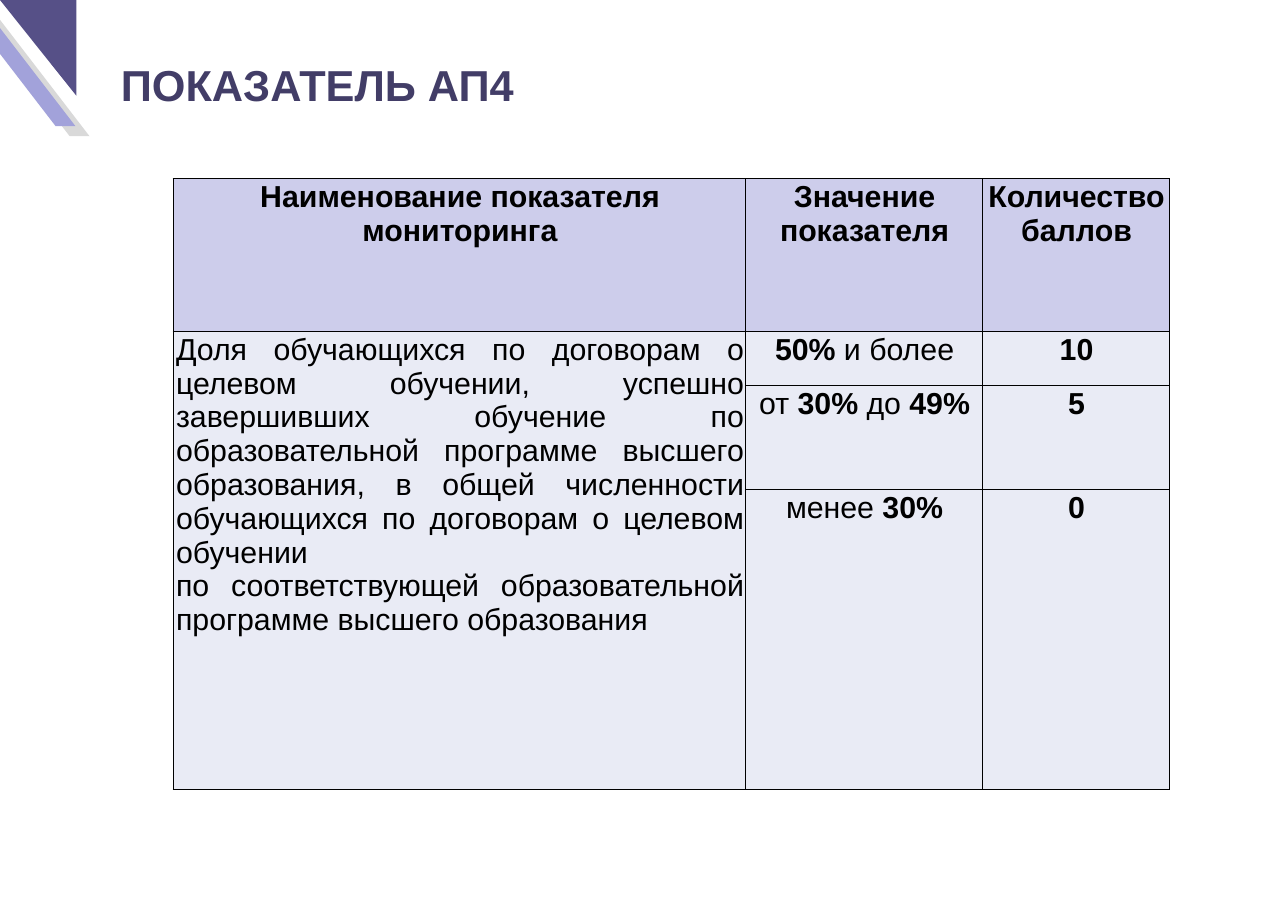
import pptx
import pptx.util
import pptx.dml.color
import pptx.enum.shapes
import pptx.enum.text
from lxml import etree
from pptx.util import Cm

FONT = "Arial"
BLACK = "000000"
HEADER_FILL = "CDCDEB"
BODY_FILL = "E9EBF5"
A = "http://schemas.openxmlformats.org/drawingml/2006/main"
ALIGN = pptx.enum.text.PP_ALIGN
SHAPE = pptx.enum.shapes.MSO_SHAPE

COLUMN_WIDTHS = [18.66, 7.72, 6.1]
ROW_HEIGHTS = [4.98, 1.76, 3.38, 9.8]
# Text between ** marks is bold
ROWS = [
    ["**Наименование показателя мониторинга**", "**Значение показателя**",
     "**Количество баллов**"],
    ["Доля обучающихся по договорам о целевом обучении, успешно завершивших "
     "обучение по образовательной программе высшего образования, в общей "
     "численности обучающихся по договорам о целевом обучении \n"
     "по соответствующей образовательной программе высшего образования",
     "**50%** и более", "**10**"],
    ["", "от **30%** до **49%**", "**5**"],
    ["", "менее **30%**", "**0**"],
]


def rgb(color):
    return pptx.dml.color.RGBColor.from_string(color)


def add_span(para, text, size, color=BLACK, bold=False):
    span = para.add_run()
    span.text = text
    span.font.name = FONT
    span.font.size = pptx.util.Pt(size)
    span.font.bold = bold
    span.font.color.rgb = rgb(color)


def write_text(para, text, size=28, align=ALIGN.CENTER):
    para.alignment = align
    for number, line in enumerate(text.split("\n")):
        if number:
            para.add_line_break()
        for index, part in enumerate(line.split("**")):
            if part:
                add_span(para, part, size, bold=index % 2 == 1)


def add_corner_shape(page, kind, left, top, width, height, color, flips):
    shape = page.shapes.add_shape(kind, Cm(left), Cm(top), Cm(width), Cm(height))
    shape.shadow.inherit = False
    shape.fill.solid()
    shape.fill.fore_color.rgb = rgb(color)
    shape.line.fill.background()
    for flip in flips:
        shape._element.spPr.find(f"{{{A}}}xfrm").set(flip, "1")
    return shape


def add_corner(page):
    for left, top, color in [(-0.89, 0.33, "D9D9D9"), (-1.35, 0, "A2A2DA")]:
        band = add_corner_shape(page, SHAPE.PARALLELOGRAM, left, top, 3.81, 4.11,
                                color, ["flipH"])
        band.adjustments[0] = 0.83
    add_corner_shape(page, SHAPE.RIGHT_TRIANGLE, 0, 0, 2.49, 3.12, "565087",
                     ["flipH", "flipV"])


def add_title(page, text):
    title = page.shapes.title
    title.left, title.top, title.width, title.height = (
        Cm(3.94), Cm(1.78), Cm(31.52), Cm(1.96))
    frame = title.text_frame
    frame.margin_left = 0
    frame.margin_right = Cm(0.25)
    frame.margin_top = frame.margin_bottom = Cm(0.13)
    frame.vertical_anchor = pptx.enum.text.MSO_ANCHOR.TOP
    frame.auto_size = pptx.enum.text.MSO_AUTO_SIZE.NONE
    para = frame.paragraphs[0]
    para.alignment = ALIGN.LEFT
    add_span(para, text, 40, "423D67", bold=True)


def add_borders(cell, color=BLACK, width=1):
    properties = cell._tc.get_or_add_tcPr()
    for side in ("lnL", "lnR", "lnT", "lnB"):
        line = etree.SubElement(properties, f"{{{A}}}{side}",
                                w=str(pptx.util.Pt(width)))
        fill = etree.SubElement(line, f"{{{A}}}solidFill")
        etree.SubElement(fill, f"{{{A}}}srgbClr", val=color)


def format_cell(cell, color):
    cell.margin_left = Cm(0.1)
    cell.margin_right = cell.margin_top = cell.margin_bottom = Cm(0.05)
    add_borders(cell)
    cell.fill.solid()
    cell.fill.fore_color.rgb = rgb(color)


def add_score_table(page):
    table = page.shapes.add_table(
        len(ROWS), len(COLUMN_WIDTHS), Cm(5.64), Cm(5.82),
        Cm(sum(COLUMN_WIDTHS)), Cm(sum(ROW_HEIGHTS))).table
    table.first_row = table.horz_banding = False
    for column, width in zip(table.columns, COLUMN_WIDTHS):
        column.width = Cm(width)
    for row, height in zip(table.rows, ROW_HEIGHTS):
        row.height = Cm(height)
    for r, texts in enumerate(ROWS):
        for c, text in enumerate(texts):
            cell = table.cell(r, c)
            format_cell(cell, BODY_FILL if r else HEADER_FILL)
            align = ALIGN.JUSTIFY if r and c == 0 else ALIGN.CENTER
            write_text(cell.text_frame.paragraphs[0], text, align=align)
    # The indicator name spans all score rows
    table.cell(1, 0).merge(table.cell(3, 0))


def main():
    deck = pptx.Presentation()
    deck.slide_width, deck.slide_height = Cm(41.99), Cm(29.69)
    page = deck.slides.add_slide(deck.slide_layouts.get_by_name("Title Only"))
    add_corner(page)
    add_title(page, "ПОКАЗАТЕЛЬ АП4")
    add_score_table(page)
    deck.save("out.pptx")


if __name__ == "__main__":
    main()
